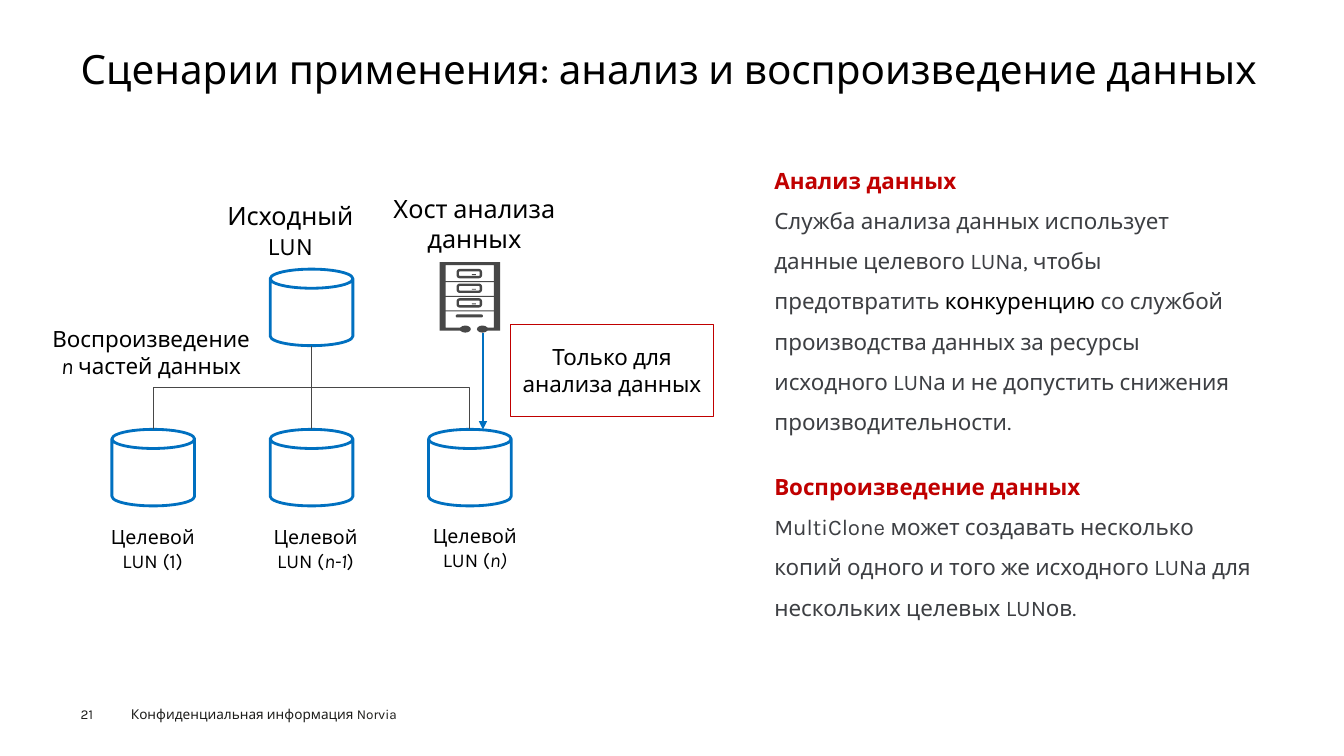
from lxml.etree import SubElement
from pptx import Presentation
from pptx.dml.color import RGBColor
from pptx.enum.shapes import MSO_CONNECTOR, MSO_SHAPE
from pptx.enum.text import MSO_ANCHOR, MSO_AUTO_SIZE, PP_ALIGN
from pptx.oxml.ns import qn
from pptx.util import Inches, Pt

FONT = "Karla"
COLORS = {
    "black": "000000",
    "white": "FFFFFF",
    "blue": "0070C0",
    "red": "C00000",
    "grey": "3D3F43",
    "icon": "474747",
    "footer": "1D1D1B",
}

# Diagram grid
CAN_WIDTH, CAN_HEIGHT = 0.82, 0.76
CAN_LEFTS = [1.11 + 1.57 * column for column in range(3)]
CAN_CENTERS = [left + CAN_WIDTH / 2 for left in CAN_LEFTS]
SOURCE_TOP, TARGET_TOP, BRANCH_Y = 2.67, 4.26, 3.84


def rgb(name):
    return RGBColor.from_string(COLORS[name])


def add_span(para, text, size, color="black", bold=False, italic=False):
    span = para.add_run()
    span.text = text
    span.font.name = FONT
    span.font.size = Pt(size)
    span.font.bold = bold
    span.font.italic = italic
    span.font.color.rgb = rgb(color)


def add_label(slide, area, spans, size, align=PP_ALIGN.CENTER,
              anchor=MSO_ANCHOR.TOP, color="black", margin=None):
    """Add a text box; spans are (text, italic) pairs."""
    box = slide.shapes.add_textbox(*map(Inches, area))
    frame = box.text_frame
    frame.word_wrap = True
    frame.vertical_anchor = anchor
    if margin is not None:
        frame.margin_left = frame.margin_right = Inches(margin)
        frame.margin_top = frame.margin_bottom = Inches(margin)
    para = frame.paragraphs[0]
    para.alignment = align
    for text, italic in spans:
        add_span(para, text, size, color, italic=italic)


def paint(shape, fill=None, line=None, width=1.0):
    shape.shadow.inherit = False
    if fill:
        shape.fill.solid()
        shape.fill.fore_color.rgb = rgb(fill)
    else:
        shape.fill.background()
    if line:
        shape.line.color.rgb = rgb(line)
        shape.line.width = Pt(width)
    else:
        shape.line.fill.background()


def add_block(slide, kind, area, **style):
    shape = slide.shapes.add_shape(kind, *map(Inches, area))
    paint(shape, **style)
    return shape


def add_line(slide, start, end, color, width, bent=False, arrow=False):
    kind = MSO_CONNECTOR.ELBOW if bent else MSO_CONNECTOR.STRAIGHT
    line = slide.shapes.add_connector(kind, *map(Inches, (*start, *end)))
    line.line.color.rgb = rgb(color)
    line.line.width = Pt(width)
    properties = line._element.spPr
    if bent:
        properties.find(qn("a:prstGeom")).set("prst", "bentConnector2")
    if arrow:
        SubElement(line.line._get_or_add_ln(), qn("a:tailEnd"), type="triangle")
    SubElement(properties, qn("a:effectLst"))


def add_can(slide, left, top):
    add_block(slide, MSO_SHAPE.CAN, (left, top, CAN_WIDTH, CAN_HEIGHT),
              fill="white", line="blue", width=2)


def add_server(slide):
    # Cabinet frame, open at the bottom between the feet
    outline = [(4.36, 2.6), (4.96, 2.6), (4.96, 3.28), (4.8, 3.28),
               (4.8, 3.25), (4.9, 3.25), (4.9, 2.63), (4.42, 2.63),
               (4.42, 3.25), (4.61, 3.25), (4.61, 3.28), (4.36, 3.28)]
    points = [(Inches(x), Inches(y)) for x, y in outline]
    builder = slide.shapes.build_freeform(*points[0])
    builder.add_line_segments(points[1:], close=True)
    paint(builder.convert_to_shape(), fill="icon")

    # Three drawers, each with a handle and a shelf below
    for row in range(3):
        top = 2.67 + 0.145 * row
        drawer = add_block(slide, MSO_SHAPE.ROUNDED_RECTANGLE,
                           (4.54, top + 0.01, 0.23, 0.07), line="icon", width=1.7)
        drawer.adjustments[0] = 0.3
        add_block(slide, MSO_SHAPE.RECTANGLE, (4.68, top + 0.05, 0.04, 0.01), fill="icon")
        add_block(slide, MSO_SHAPE.RECTANGLE, (4.39, top + 0.12, 0.54, 0.01), fill="icon")

    # Bottom slot and feet
    slot = add_block(slide, MSO_SHAPE.ROUNDED_RECTANGLE, (4.52, 3.12, 0.27, 0.03), fill="icon")
    slot.adjustments[0] = 0.5
    for left in (4.56, 4.73):
        add_block(slide, MSO_SHAPE.OVAL, (left, 3.23, 0.11, 0.07), fill="icon")


def place(holder, area):
    holder.left, holder.top, holder.width, holder.height = map(Inches, area)
    frame = holder.text_frame
    frame.word_wrap = True
    frame.auto_size = MSO_AUTO_SIZE.NONE
    frame.vertical_anchor = MSO_ANCHOR.TOP
    return frame


def fill_title(slide, text):
    frame = place(slide.shapes.title, (0.8, 0.49, 12, 0.54))
    frame.margin_left = frame.margin_right = 0
    frame.margin_top = frame.margin_bottom = 0
    para = frame.paragraphs[0]
    para.alignment = PP_ALIGN.LEFT
    para.line_spacing = 0.9
    add_span(para, text, 28.8)


def fill_section(holder, area, heading, spans):
    """Fill a body placeholder; spans are (text, color) pairs."""
    frame = place(holder, area)
    for para in (frame.paragraphs[0], frame.add_paragraph()):
        properties = para._p.get_or_add_pPr()
        properties.set("marL", "0")
        properties.set("indent", "0")
        SubElement(properties, qn("a:buNone"))
        para.line_spacing = 1.5
        para.space_before = Pt(0)
    add_span(frame.paragraphs[0], heading, 16, "red", bold=True)
    for text, color in spans:
        add_span(frame.paragraphs[1], text, 16, color)


def add_diagram(slide):
    # Volumes and host
    add_can(slide, CAN_LEFTS[1], SOURCE_TOP)
    for left in CAN_LEFTS:
        add_can(slide, left, TARGET_TOP)
    add_server(slide)

    # Links
    middle = CAN_CENTERS[1]
    add_line(slide, (middle, SOURCE_TOP + CAN_HEIGHT), (middle, TARGET_TOP), "icon", 0.75)
    for center in (CAN_CENTERS[0], CAN_CENTERS[2]):
        add_line(slide, (middle, BRANCH_Y), (center, TARGET_TOP), "icon", 0.75, bent=True)
    add_line(slide, (4.79, 3.3), (4.79, TARGET_TOP), "blue", 1.5, arrow=True)

    # Labels
    add_label(slide, (0.36, 3.18, 2.28, 0.91),
              [("Воспроизведение ", False), ("n ", True), ("частей данных", False)], 16)
    targets = [
        ((0.94, 5.16, 1.15, 0.57), [("Целевой LUN (1)", False)]),
        ((2.46, 5.16, 1.34, 0.57), [("Целевой LUN (", False), ("n-1", True), (")", False)]),
        ((4.01, 5.15, 1.4, 0.57), [("Целевой LUN (", False), ("n)", True)]),
    ]
    for area, spans in targets:
        add_label(slide, area, spans, 14)
    for area, text in [((2.1, 1.93, 1.56, 0.71), "Исходный LUN"),
                       ((3.76, 1.86, 1.89, 0.71), "Хост анализа данных")]:
        add_label(slide, area, [(text, False)], 18, anchor=MSO_ANCHOR.MIDDLE)

    # Note
    note = add_block(slide, MSO_SHAPE.RECTANGLE, (5.06, 3.22, 2.02, 0.91),
                     line="red", width=0.75)
    note.text_frame.word_wrap = True
    note.text_frame.vertical_anchor = MSO_ANCHOR.MIDDLE
    para = note.text_frame.paragraphs[0]
    para.alignment = PP_ALIGN.CENTER
    add_span(para, "Только для анализа данных", 16)


def main():
    deck = Presentation()
    deck.slide_width, deck.slide_height = Inches(13.33), Inches(7.5)
    page = deck.slides.add_slide(deck.slide_layouts.get_by_name("Two Content"))

    fill_title(page, "Сценарии применения: анализ и воспроизведение данных")
    add_diagram(page)

    # Explanations
    fill_section(page.placeholders[1], (7.58, 1.47, 4.86, 3), "Анализ данных", [
        ("Служба анализа данных использует данные целевого LUNа, чтобы предотвратить ", "grey"),
        ("конкуренцию ", "black"),
        ("со службой производства данных за ресурсы исходного LUNа "
         "и не допустить снижения производительности.", "grey")])
    fill_section(page.placeholders[2], (7.58, 4.51, 4.96, 1.8), "Воспроизведение данных", [
        ("MultiClone может создавать несколько копий одного и того же "
         "исходного LUNа для нескольких целевых LUNов.", "grey")])

    # Footer
    add_label(page, (1.2, 6.95, 3.76, 0.26), [("Конфиденциальная информация Norvia", False)],
              9.7, PP_ALIGN.LEFT, color="footer")
    add_label(page, (0.8, 7, 0.55, 0.16), [("21", False)],
              9.7, PP_ALIGN.LEFT, color="footer", margin=0)

    deck.save("out.pptx")


if __name__ == "__main__":
    main()
